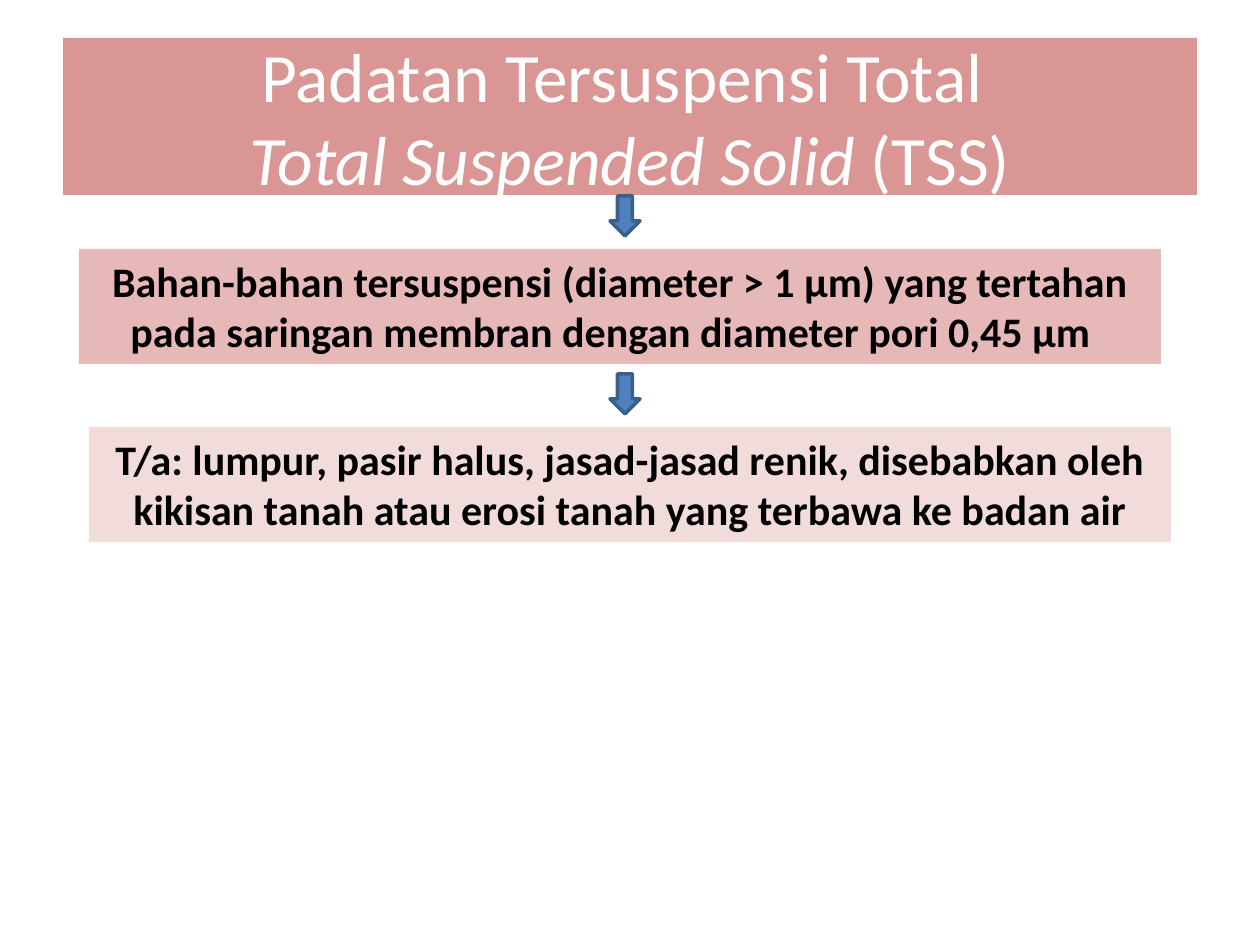
from dataclasses import dataclass

from pptx import Presentation
from pptx.dml.color import RGBColor
from pptx.enum.shapes import MSO_SHAPE
from pptx.enum.text import MSO_ANCHOR, MSO_AUTO_SIZE, PP_ALIGN
from pptx.util import Emu, Pt


@dataclass(frozen=True)
class Theme:
    """Colours, font and type sizes of the slide."""
    font: str = "Calibri"
    title_size: float = 39.6
    body_size: float = 24
    title_text: str = "FFFFFF"
    body_text: str = "000000"
    title_fill: str = "D99694"
    definition_fill: str = "E6B9B8"
    example_fill: str = "F2DCDB"
    arrow_fill: str = "4F81BD"
    arrow_line: str = "3A5F8C"


THEME = Theme()
PX_PER_INCH = 126
STEP_PITCH = 178


def px(length):
    """Turn pixels into EMU."""
    return Emu(round(length * 914400 / PX_PER_INCH))


def fill_shape(shape, color):
    """Give a shape a solid fill."""
    shape.fill.solid()
    shape.fill.fore_color.rgb = RGBColor.from_string(color)


def add_text(paragraph, text, *, size, color, bold=False, italic=False):
    """Append a formatted run to a centred paragraph."""
    paragraph.alignment = PP_ALIGN.CENTER
    run = paragraph.add_run()
    run.text = text
    font = run.font
    font.name = THEME.font
    font.size = Pt(size)
    font.bold = bold
    font.italic = italic
    font.color.rgb = RGBColor.from_string(color)


def add_title(slide, first_line, term, abbreviation):
    """Fill the title placeholder with its two lines."""
    title = slide.shapes.title
    title.left, title.top, title.width, title.height = map(px, (63, 38, 1134, 157))
    fill_shape(title, THEME.title_fill)
    frame = title.text_frame
    frame.word_wrap = True
    frame.auto_size = MSO_AUTO_SIZE.NONE
    frame.vertical_anchor = MSO_ANCHOR.MIDDLE
    paragraph = frame.paragraphs[0]
    style = {"size": THEME.title_size, "color": THEME.title_text}
    add_text(paragraph, first_line, **style)
    paragraph.add_line_break()
    add_text(paragraph, term, italic=True, **style)
    add_text(paragraph, abbreviation, **style)


def add_statement(slide, left, top, text, fill):
    """Add a filled box with a bold statement."""
    box = slide.shapes.add_textbox(px(left), px(top), px(1082), px(115))
    fill_shape(box, fill)
    frame = box.text_frame
    frame.word_wrap = True
    frame.auto_size = MSO_AUTO_SIZE.SHAPE_TO_FIT_TEXT
    add_text(frame.paragraphs[0], text, size=THEME.body_size,
             color=THEME.body_text, bold=True)


def add_down_arrow(slide, top):
    """Add an arrow that leads to the next box."""
    arrow = slide.shapes.add_shape(
        MSO_SHAPE.DOWN_ARROW, px(610), px(top), px(30), px(40))
    arrow.shadow.inherit = False
    fill_shape(arrow, THEME.arrow_fill)
    arrow.line.color.rgb = RGBColor.from_string(THEME.arrow_line)
    arrow.line.width = Pt(2)


def main():
    """Build the slide and save it."""
    presentation = Presentation()
    presentation.slide_width, presentation.slide_height = px(1260), px(945)
    slide = presentation.slides.add_slide(presentation.slide_layouts[5])
    add_title(slide, "Padatan Tersuspensi Total ", "Total Suspended Solid", " (TSS)")
    statements = [
        (79, "Bahan-bahan tersuspensi (diameter > 1 μm) yang tertahan pada "
             "saringan membran dengan diameter pori 0,45 μm  ",
         THEME.definition_fill),
        (89, "T/a: lumpur, pasir halus, jasad-jasad renik, disebabkan oleh "
             "kikisan tanah atau erosi tanah yang terbawa ke badan air",
         THEME.example_fill),
    ]
    for step, (left, text, fill) in enumerate(statements):
        offset = step * STEP_PITCH
        add_statement(slide, left, 249 + offset, text, fill)
        add_down_arrow(slide, 196 + offset)
    presentation.save("out.pptx")


if __name__ == "__main__":
    main()
